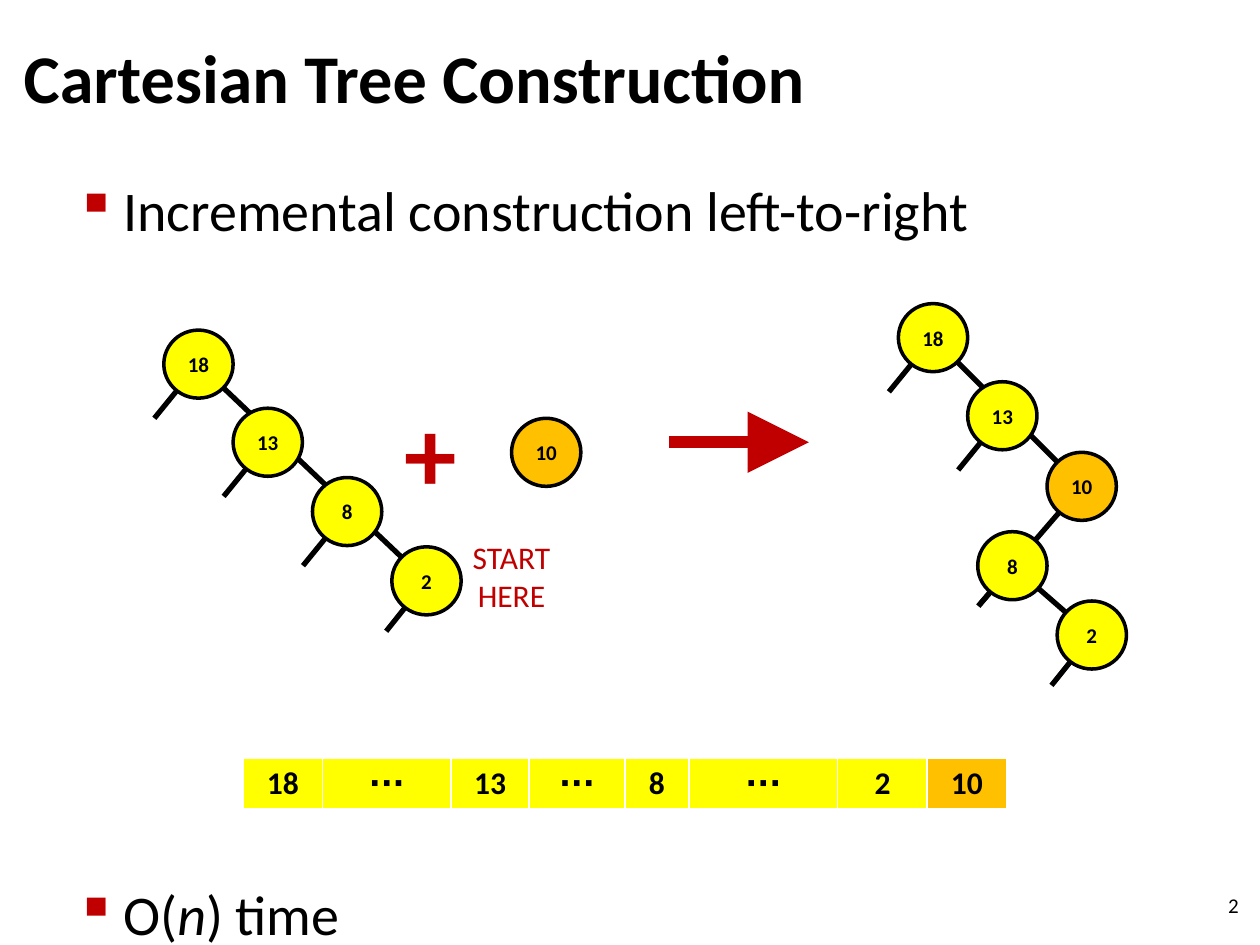
from lxml.etree import SubElement as Sub
from pptx import Presentation
from pptx.dml.color import RGBColor
from pptx.enum.shapes import MSO_CONNECTOR as Conn, MSO_SHAPE as Kind
from pptx.enum.text import MSO_ANCHOR as Anchor, PP_ALIGN as Align
from pptx.oxml.ns import qn
from pptx.util import Inches, Pt

BLACK, WHITE, RED = "000000", "FFFFFF", "C00000"
YELLOW, ORANGE = "FFFF00", "FFC000"
WIDE, HIGH = 0.55, 0.54  # size of a tree node
STUB, SHORT, LONG = (-0.35, 0.43), (-0.32, 0.4), (-0.82, 0.95)


def color(hue):
    return RGBColor.from_string(hue)


def add_run(para, text, size, hue=BLACK, bold=False, italic=False):
    run = para.add_run()
    run.text = text
    font = run.font
    font.name, font.size, font.bold, font.italic = "Calibri", Pt(size), bold, italic
    font.color.rgb = color(hue)


def add_box(slide, box, anchor=Anchor.TOP, align=Align.LEFT):
    frame = slide.shapes.add_textbox(*map(Inches, box)).text_frame
    frame.word_wrap = True
    frame.vertical_anchor = anchor
    frame.paragraphs[0].alignment = align
    return frame


def add_line(shapes, start, end, width=3, hue=BLACK):
    line = shapes.add_connector(Conn.STRAIGHT, *map(Inches, (*start, *end)))
    line.line.width = Pt(width)
    line.line.color.rgb = color(hue)
    Sub(line._element.spPr, qn("a:effectLst"))
    return line


def add_node(shapes, x, y, text, fill):
    node = shapes.add_shape(Kind.OVAL, *map(Inches, (x, y, WIDE, HIGH)))
    node.shadow.inherit = False
    node.fill.solid()
    node.fill.fore_color.rgb = color(fill)
    node.line.color.rgb = color(BLACK)
    node.line.width = Pt(2)
    frame = node.text_frame
    frame.margin_left = frame.margin_right = 0
    frame.vertical_anchor = Anchor.MIDDLE
    frame.paragraphs[0].alignment = Align.CENTER
    add_run(frame.paragraphs[0], text, 12, bold=True)


def add_tree(slide, left, top, nodes, edges):
    """Nodes are (text, x, y, stub, fill); edges join node indexes."""
    shapes = slide.shapes.add_group_shape().shapes
    mids = [(left + x + WIDE / 2, top + y + HIGH / 2) for _, x, y, _, _ in nodes]
    for a, b in edges:
        add_line(shapes, mids[a], mids[b])
    for (x, y), node in zip(mids, nodes):
        dx, dy = node[3]
        add_line(shapes, (x, y), (x + dx, y + dy))
    for text, x, y, _, fill in nodes:
        add_node(shapes, left + x, top + y, text, fill)


def add_title(slide, box):
    para = add_box(slide, box, Anchor.MIDDLE).paragraphs[0]
    para.line_spacing = 0.9
    add_run(para, "Cartesian Tree Construction", 39, bold=True)


def add_body(slide, box):
    frame = add_box(slide, box)
    first, last = frame.paragraphs[0], frame.add_paragraph()
    last.space_before = Pt(364)  # room for the trees and the array
    for para in (first, last):
        props = para._p.get_or_add_pPr()
        props.set("marL", str(Inches(0.38)))
        props.set("indent", str(-Inches(0.38)))
        Sub(Sub(props, qn("a:buClr")), qn("a:srgbClr"), val=RED)
        Sub(props, qn("a:buChar"), char="▪")
    add_run(first, "Incremental construction left-to-right", 32)
    add_run(last, "O(", 32)
    add_run(last, "n", 32, italic=True)
    add_run(last, ") time", 32)


def add_border(cell):
    props = cell._tc.get_or_add_tcPr()
    for spot, (side, width) in enumerate(zip("LRTB", (1, 1, 1, 3))):
        edge = props.makeelement(qn("a:ln" + side), {"w": str(Pt(width))})
        Sub(Sub(edge, qn("a:solidFill")), qn("a:srgbClr"), val=WHITE)
        props.insert(spot, edge)


def add_array(slide, left, top, high):
    texts = ["18", "∙∙∙", "13", "∙∙∙", "8", "∙∙∙", "2", "10"]
    widths = [0.63, 1.02, 0.62, 0.76, 0.51, 1.18, 0.71, 0.63]
    box = map(Inches, (left, top, sum(widths), high))
    table = slide.shapes.add_table(1, len(texts), *box).table
    table.first_row = table.horz_banding = False
    for col, (text, width) in enumerate(zip(texts, widths)):
        table.columns[col].width = Inches(width)
        cell = table.cell(0, col)
        cell.fill.solid()
        cell.fill.fore_color.rgb = color(ORANGE if text == "10" else YELLOW)
        add_border(cell)
        para = cell.text_frame.paragraphs[0]
        para.alignment = Align.CENTER
        add_run(para, text, 18, bold=True)


def add_step(slide, left, top):
    """The plus sign, the new node, the start label and the arrow."""
    plus = add_box(slide, (left, top, 0.79, 1.11))
    add_run(plus.paragraphs[0], "+", 60, RED, bold=True)
    add_node(slide.shapes, left + 0.95, top + 0.29, "10", ORANGE)
    label = add_box(slide, (left + 0.32, top + 1.19, 1.26, 0.71), align=Align.CENTER)
    add_run(label.paragraphs[0], "START HERE", 18, RED)
    y = top + 0.48
    arrow = add_line(slide.shapes, (left + 2.2, y), (left + 3.31, y), 7, RED)
    Sub(arrow.line._get_or_add_ln(), qn("a:tailEnd"), type="triangle", w="lg", len="lg")


def main():
    deck = Presentation()
    deck.slide_width, deck.slide_height = Inches(10), Inches(7.5)
    slide = deck.slides.add_slide(deck.slide_layouts[6])

    # Text
    add_body(slide, (0.5, 1.34, 9, 6.15))
    page = add_box(slide, (7.6, 6.98, 2.33, 0.4), Anchor.MIDDLE, Align.RIGHT)
    add_run(page.paragraphs[0], "2", 12)
    add_title(slide, (0.09, 0.29, 9, 0.71))

    # Array
    add_array(slide, 1.93, 6.02, 0.41)

    # Trees before and after the new node
    head = [("18", 0.08, 0, STUB, YELLOW), ("13", 0.63, 0.62, STUB, YELLOW)]
    old = head + [("8", 1.26, 1.17, STUB, YELLOW), ("2", 1.89, 1.72, SHORT, YELLOW)]
    new = head + [
        ("10", 1.26, 1.18, LONG, ORANGE),  # its stub runs on behind node 8
        ("8", 0.71, 1.81, (0, 0), YELLOW),
        ("2", 1.34, 2.36, SHORT, YELLOW),
    ]
    new[3] = ("8", 0.71, 1.81, (-0.27, 0.32), YELLOW)
    add_tree(slide, 1.22, 2.62, old, [(0, 3)])
    add_step(slide, 3.11, 3.03)
    add_tree(slide, 7.05, 2.41, new, [(0, 2), (3, 4)])

    deck.save("out.pptx")


if __name__ == "__main__":
    main()
